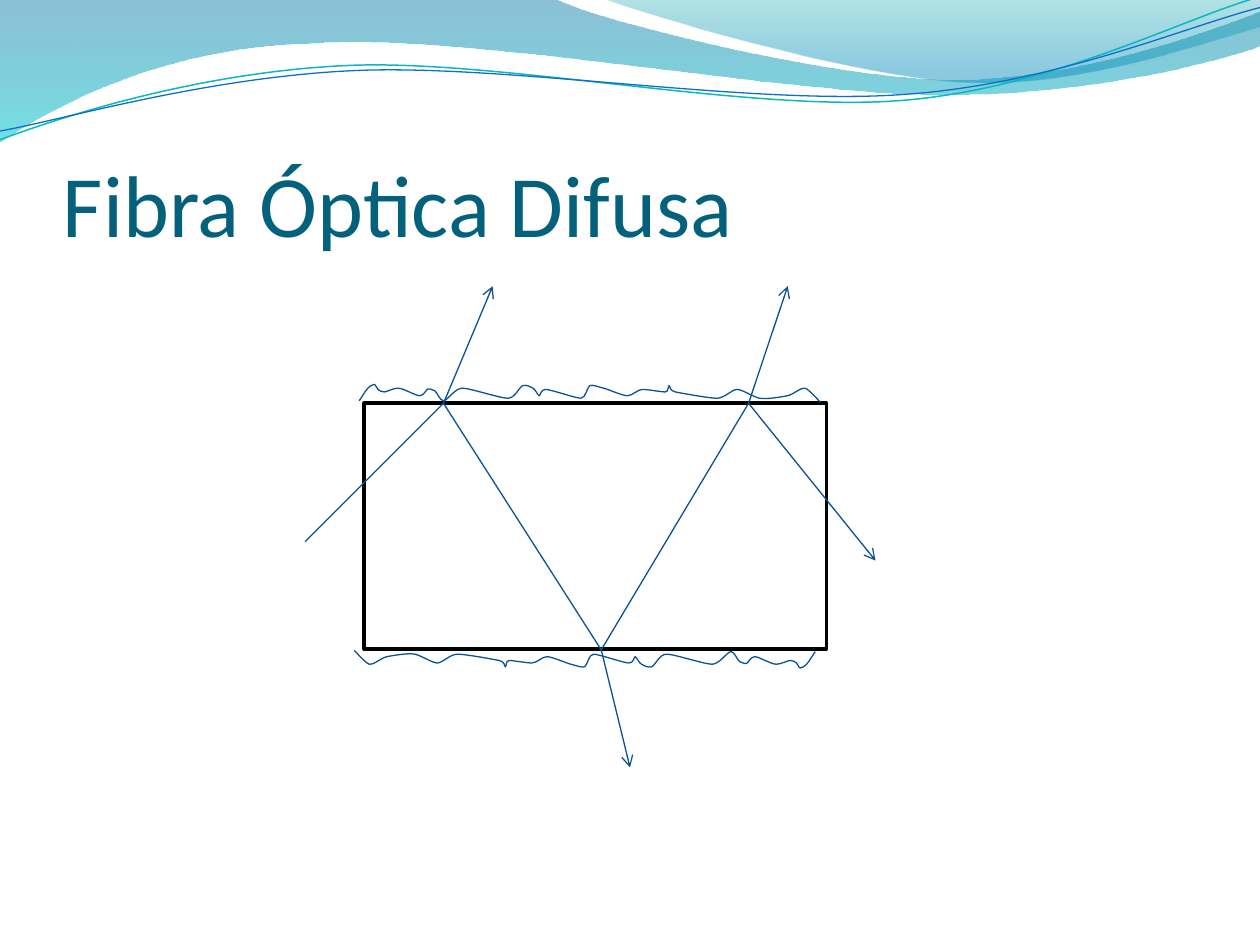
from dataclasses import dataclass

from lxml.etree import SubElement
from pptx import Presentation
from pptx.dml.color import RGBColor
from pptx.enum.shapes import MSO_CONNECTOR, MSO_SHAPE
from pptx.enum.text import MSO_ANCHOR as Anchor
from pptx.oxml.ns import qn
from pptx.util import Cm, Pt


@dataclass(frozen=True)
class Theme:
    font: str = "Calibri"
    title_size: float = 50
    title: str = "04617B"
    ray: str = "095295"
    ray_width: float = 0.75
    fiber: str = "000000"
    fiber_width: float = 2
    teal_wave: str = "0AB8BF"
    blue_wave: str = "0F6FC6"
    # Gradient stops: position, colour, opacity in percent
    wide_band: tuple = ((0, "0074A1", 45), (1, "00C6CF", 55))
    corner_band: tuple = ((0, "00A1A9", 30), (0.8, "008BBF", 45))


theme = Theme()
GRID = Cm(0.0254)  # curve points are whole steps of this grid

deck = Presentation()
deck.slide_width, deck.slide_height = Cm(25.4), Cm(19.05)
page = deck.slides.add_slide(deck.slide_layouts[6])


def add_curve(start, segments, closed=False):
    """Draw segments of three Bézier points, or of one point for a straight."""
    builder = page.shapes.build_freeform(*start, scale=GRID)
    for segment in segments:
        builder.add_line_segments(segment if len(segment) == 3 else segment * 3, close=False)
    if closed:
        builder.add_line_segments([], close=True)
    curve = builder.convert_to_shape()
    outline = next(curve.element.iter(qn("a:path")))
    steps = outline.findall(qn("a:lnTo"))
    for first, second, third in zip(steps[::3], steps[1::3], steps[2::3]):
        first.tag = qn("a:cubicBezTo")
        for extra in (second, third):
            first.append(extra[0])
            outline.remove(extra)
    curve.shadow.inherit = False
    return curve


def style_line(shape, color, width):
    shape.line.color.rgb = RGBColor.from_string(color)
    shape.line.width = Pt(width)


# Header bands
wide_band = [
    [(440, -1)],
    [(476, 17), (664, 63), (758, 63)],
    [(853, 63), (958, 26), (1000, 9)],
    [(1001, 36)],
    [(983, 44), (870, 76), (746, 75)],
    [(622, 75), (382, 28), (257, 34)],
    [(129, 36), (46, 83), (-1, 113)],
]
corner_band = [
    [(509, 11), (682, 62), (769, 65)],
    [(856, 69), (961, 32), (1000, 21)],
    [(1000, 0)],
]
for start, segments, stops in (
    ((0, 0), wide_band, theme.wide_band),
    ((479, -1), corner_band, theme.corner_band),
):
    band = add_curve(start, segments, closed=True)
    band.line.fill.background()
    band.fill.gradient()
    band.fill.gradient_angle = 270
    for stop, (position, color, _) in zip(band.fill.gradient_stops, stops):
        stop.position = position
        stop.color.rgb = RGBColor.from_string(color)
    for tint, (_, _, opacity) in zip(band.element.spPr.iter(qn("a:srgbClr")), stops):
        SubElement(tint, qn("a:alpha"), val=str(opacity * 1000))

# Header wave lines
teal_wave = [
    [(48, 93), (158, 57), (277, 52)],
    [(395, 47), (593, 89), (713, 80)],
    [(833, 71), (938, 15), (998, -2)],
]
blue_wave = [
    [(47, 96), (164, 61), (283, 56)],
    [(403, 51), (597, 84), (717, 75)],
    [(836, 67), (941, 21), (1000, 6)],
]
for start, segments, color, width in (
    ((0, 111), teal_wave, theme.teal_wave, 0.85),
    ((0, 104), blue_wave, theme.blue_wave, 0.75),
):
    wave = add_curve(start, segments)
    wave.fill.background()
    style_line(wave, color, width)

# Title
box = page.shapes.add_textbox(Cm(1.27), Cm(1.96), Cm(22.86), Cm(3.18))
frame = box.text_frame
frame.word_wrap = True
frame.vertical_anchor = Anchor.BOTTOM
frame.margin_left = frame.margin_right = frame.margin_bottom = 0
frame.margin_top = Cm(0.13)
para = frame.paragraphs[0]
span = para.add_run()
span.text = "Fibra Óptica Difusa"
span.font.name = theme.font
span.font.size = Pt(theme.title_size)
span.font.color.rgb = RGBColor.from_string(theme.title)

# Fiber body
fiber = page.shapes.add_shape(
    MSO_SHAPE.FLOWCHART_PROCESS, Cm(7.34), Cm(8.13), Cm(9.32), Cm(4.95)
)
fiber.shadow.inherit = False
fiber.fill.background()
style_line(fiber, theme.fiber, theme.fiber_width)

# Light rays, bouncing at three points and scattering outwards
first_hit, low_hit, last_hit = (8.94, 8.13), (12.12, 13.1), (15.09, 8.13)
rays = [
    ((6.15, 10.92), first_hit, False),
    (low_hit, first_hit, False),
    (low_hit, last_hit, False),
    (last_hit, (17.65, 11.3), True),
    (first_hit, (9.93, 5.77), True),
    (low_hit, (12.7, 15.47), True),
    (last_hit, (15.88, 5.77), True),
]
for start, end, arrow in rays:
    ray = page.shapes.add_connector(
        MSO_CONNECTOR.STRAIGHT, *[Cm(length) for length in start + end]
    )
    style_line(ray, theme.ray, theme.ray_width)
    if arrow:
        SubElement(ray.line._get_or_add_ln(), qn("a:tailEnd"), type="arrow")
    SubElement(ray.element.spPr, qn("a:effectLst"))

# Rough surface: a smooth line through its bumps and dips
bumps = [
    (285, 320), (292, 310), (297, 307), (300, 311), (305, 313), (316, 310),
    (333, 316), (339, 311), (345, 312), (352, 320), (367, 310), (403, 318),
    (415, 308), (423, 310), (428, 316), (433, 311), (461, 318), (468, 308),
    (479, 310), (498, 316), (510, 311), (528, 313), (531, 308), (536, 313),
    (569, 318), (585, 311), (603, 318), (625, 316), (639, 310), (651, 321),
]
slopes = [
    ((after[0] - before[0]) / 8, (after[1] - before[1]) / 8)
    for before, after in zip(bumps[:1] + bumps, bumps[1:] + bumps[-1:])
]
surface_segments = [
    [(x1 + dx1, y1 + dy1), (x2 - dx2, y2 - dy2), (x2, y2)]
    for (x1, y1), (dx1, dy1), (x2, y2), (dx2, dy2)
    in zip(bumps, slopes, bumps[1:], slopes[1:])
]

# The lower surface is the upper one turned half round
for left, top, turn in ((7.24, 7.75, 0), (7.14, 13.11, 180)):
    surface = add_curve(bumps[0], surface_segments)
    surface.left, surface.top, surface.rotation = Cm(left), Cm(top), turn
    surface.fill.background()
    style_line(surface, theme.ray, theme.ray_width)

deck.save("out.pptx")
